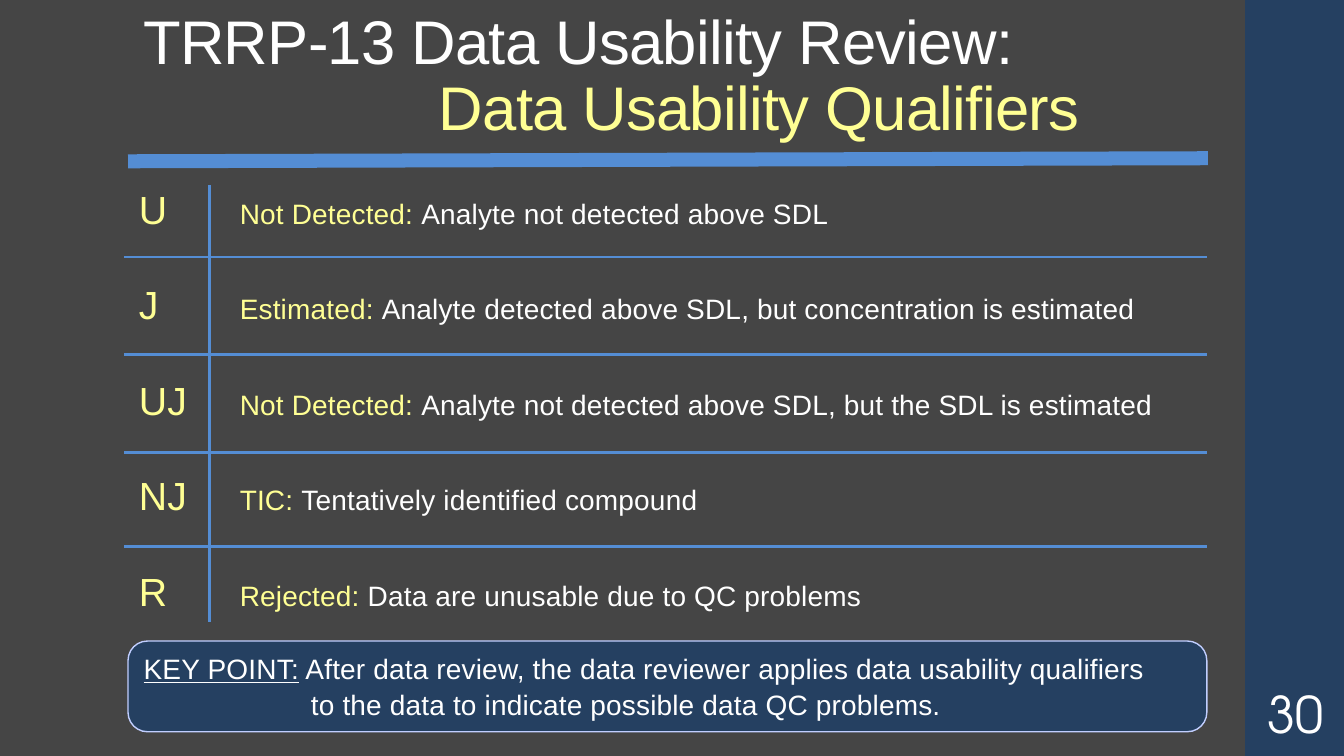
from lxml import etree
from pptx import Presentation
from pptx.dml.color import RGBColor
from pptx.enum import shapes, text
from pptx.oxml import ns
from pptx.util import Inches, Pt

WHITE, YELLOW, BLUE, NAVY = "FFFFFF", "FFFF94", "548DD4", "254061"
LEFT, WIDTH = 1.27, 10.7

QUALIFIERS = [
    ("U", "Not Detected: ", "Analyte not detected above SDL"),
    ("J", "Estimated: ", "Analyte detected above SDL, but concentration is estimated"),
    ("UJ", "Not Detected: ", "Analyte not detected above SDL, but the SDL is estimated"),
    ("NJ", "TIC: ", "Tentatively identified compound"),
    ("R", "Rejected: ", "Data are unusable due to QC problems"),
]
ROW_RULES = [2.55, 3.52, 4.49, 5.42]


def color(value):
    return RGBColor.from_string(value)


def set_values(target, values):
    for name, value in values.items():
        setattr(target, name, value)


def place(shape, left, top, width, height):
    set_values(shape, {"left": Inches(left), "top": Inches(top),
                       "width": Inches(width), "height": Inches(height)})


def set_frame(shape, anchor):
    frame = shape.text_frame
    set_values(frame, {"word_wrap": True, "vertical_anchor": anchor,
                       "auto_size": text.MSO_AUTO_SIZE.NONE})
    return frame


def add_paragraph(frame, first, indent=0, hanging=0, **values):
    """Return the frame's first paragraph or a new one, with its indents set."""
    para = frame.paragraphs[0] if first else frame.add_paragraph()
    properties = para._p.get_or_add_pPr()
    properties.set("marL", str(Inches(indent)))
    properties.set("indent", str(Inches(-hanging)))
    if hanging:
        properties.set("defTabSz", str(Inches(hanging)))
    set_values(para, {"alignment": text.PP_ALIGN.LEFT, **values})
    return para


def add_span(para, words, size, fill=WHITE, spacing=0.1, name="Arial", **values):
    span = para.add_run()
    span.text = words
    set_values(span.font, {"size": Pt(size), "name": name, **values})
    span.font.color.rgb = color(fill)
    span._r.get_or_add_rPr().set("spc", str(round(spacing * 100)))


def add_line(page, start, end, weight):
    points = [Inches(value) for value in (*start, *end)]
    line = page.shapes.add_connector(shapes.MSO_CONNECTOR.STRAIGHT, *points)
    line.line.color.rgb = color(BLUE)
    line.line.width = Pt(weight)
    etree.SubElement(line._element.spPr, ns.qn("a:effectLst"))


def add_panel(page, kind, area, outline=None):
    panel = page.shapes.add_shape(kind, *[Inches(value) for value in area])
    panel.shadow.inherit = False
    panel.fill.solid()
    panel.fill.fore_color.rgb = color(NAVY)
    if outline:
        panel.line.color.rgb = color(outline)
        panel.line.width = Pt(1)
    else:
        panel.line.fill.background()
    return panel


def add_box(page, area, anchor):
    box = page.shapes.add_textbox(*[Inches(value) for value in area])
    return set_frame(box, anchor)


def add_title(page):
    title = page.shapes.title
    place(title, LEFT, 0.03, WIDTH, 1.45)
    frame = set_frame(title, text.MSO_ANCHOR.BOTTOM)
    lines = [("TRRP-13 Data Usability Review:", WHITE, 0.05),
             ("Data Usability Qualifiers", YELLOW, 2.98)]
    for index, (words, fill, indent) in enumerate(lines):
        para = add_paragraph(frame, index == 0, indent, line_spacing=0.9, space_before=Pt(0))
        add_span(para, words, 44, fill, -0.5)


def add_qualifiers(page):
    frame = add_box(page, (LEFT + 0.01, 1.95, WIDTH, 4.41), text.MSO_ANCHOR.TOP)
    for index, (code, term, meaning) in enumerate(QUALIFIERS):
        gap = Pt(48.1 if index else 0)
        para = add_paragraph(frame, index == 0, 1, 1, line_spacing=0.6, space_before=gap)
        add_span(para, code + "\t", 28, YELLOW)
        add_span(para, term, 20, YELLOW)
        add_span(para, meaning, 20)
    for top in ROW_RULES:
        add_line(page, (1.23, top), (11.97, top), 2)
    add_line(page, (2.08, 1.84), (2.08, 6.17), 2)


def add_key_point(page):
    panel = add_panel(page, shapes.MSO_SHAPE.ROUNDED_RECTANGLE,
                      (LEFT, 6.36, WIDTH, 0.9), "C1CEFF")
    panel.adjustments[0] = 0.214
    frame = set_frame(panel, text.MSO_ANCHOR.MIDDLE)
    para = add_paragraph(frame, True, space_after=Pt(2))
    add_span(para, "KEY POINT:", 20, underline=True)
    add_span(para, " After data review, the data reviewer applies data usability qualifiers", 20)
    para = add_paragraph(frame, False, 1.66, space_after=Pt(2))
    add_span(para, "to the data to indicate possible data QC problems.", 20)


def add_page_number(page):
    frame = add_box(page, (12.35, 6.75, 1, 0.65), text.MSO_ANCHOR.MIDDLE)
    sides = ("left", "top", "right", "bottom")
    set_values(frame, {f"margin_{side}": Inches(0.05) for side in sides})
    para = add_paragraph(frame, True, alignment=text.PP_ALIGN.CENTER)
    add_span(para, "30", 36, spacing=0, name="TeX Gyre Adventor")


def main():
    deck = Presentation()
    set_values(deck, {"slide_width": Inches(13.33), "slide_height": Inches(7.5)})
    page = deck.slides.add_slide(deck.slide_layouts.get_by_name("Title Only"))
    page.background.fill.solid()
    page.background.fill.fore_color.rgb = color("454545")
    add_panel(page, shapes.MSO_SHAPE.RECTANGLE, (12.35, 0, 0.98, 7.5))
    add_line(page, (LEFT, 1.6), (11.98, 1.57), 10)
    add_page_number(page)
    add_title(page)
    add_qualifiers(page)
    add_key_point(page)
    deck.save("out.pptx")


if __name__ == "__main__":
    main()
